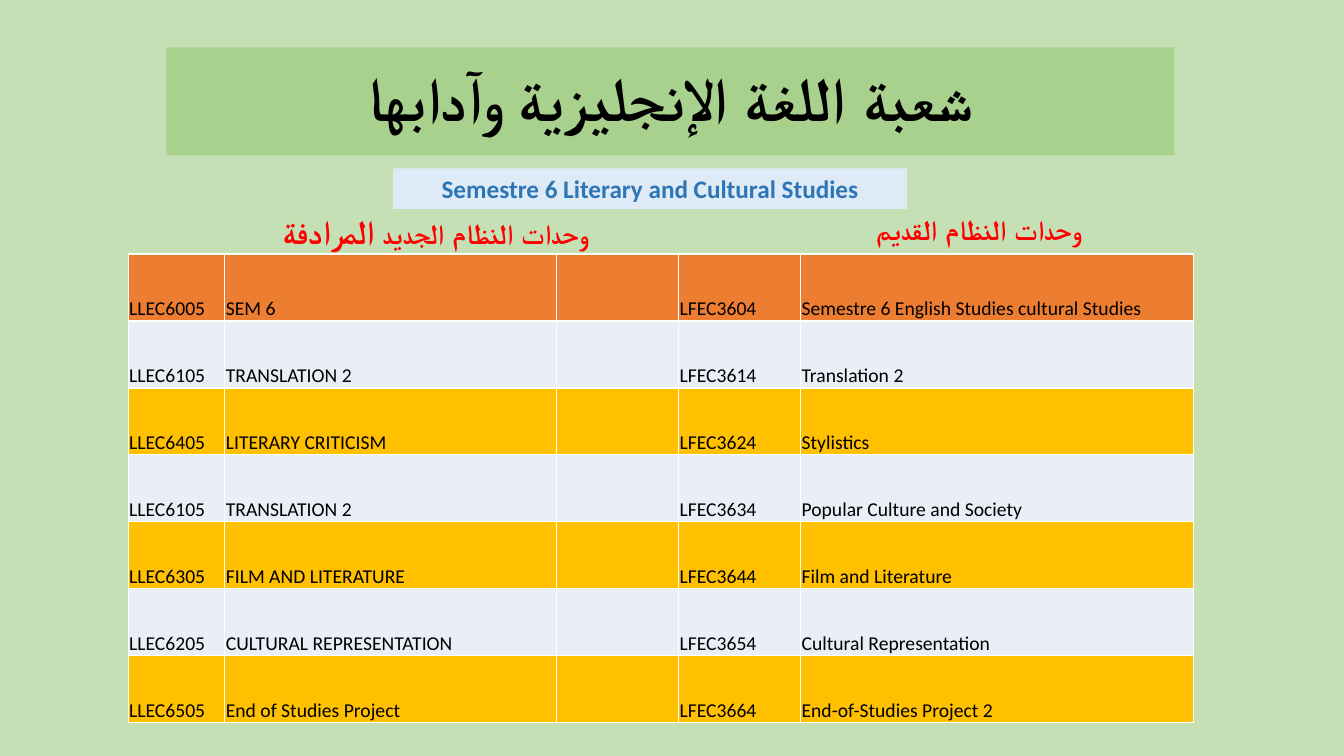
from dataclasses import dataclass
from typing import Optional

from lxml.etree import SubElement
from pptx import Presentation
from pptx.dml.color import RGBColor
from pptx.enum.shapes import MSO_SHAPE
from pptx.enum.text import MSO_ANCHOR, MSO_AUTO_SIZE, PP_ALIGN
from pptx.oxml.ns import qn
from pptx.util import Inches, Pt

FONT = "Calibri"
BLACK = RGBColor(0x00, 0x00, 0x00)
WHITE = RGBColor(0xFF, 0xFF, 0xFF)
RED = RGBColor(0xFF, 0x00, 0x00)
BLUE = RGBColor(0x2E, 0x75, 0xB6)
PALE_BLUE = RGBColor(0xDE, 0xEB, 0xF7)
PALE_GREEN = RGBColor(0xC5, 0xE0, 0xB4)
GREEN = RGBColor(0xA9, 0xD1, 0x8E)
ORANGE = RGBColor(0xED, 0x7D, 0x31)
GOLD = RGBColor(0xFF, 0xC0, 0x00)
ICE = RGBColor(0xEA, 0xEF, 0xF7)

WIDTH, HEIGHT = Inches(13.33), Inches(7.5)


def across(percent: float) -> int:
    """Share of the slide width."""
    return round(WIDTH * percent / 100)


def down(percent: float) -> int:
    """Share of the slide height."""
    return round(HEIGHT * percent / 100)


@dataclass
class Banner:
    """A line of text; its place is given in percent of the slide."""
    left: float
    top: float
    width: float
    height: float
    runs: list[tuple[str, int]]
    color: RGBColor
    fill: Optional[RGBColor] = None
    rtl: bool = True
    fits_text: bool = True
    line_spacing: Optional[float] = None


@dataclass
class Module:
    new_code: str
    new_name: str
    old_code: str
    old_name: str


BANNERS = [
    Banner(12.38, 6.27, 75, 14.27, [("شعبة اللغة الإنجليزية وآدابها", 44)],
           BLACK, GREEN, fits_text=False, line_spacing=0.9),
    Banner(15.68, 27.2, 33.45, 6.67,
           [("وحدات النظام الجديد ", 20), ("المرادفة", 24)], RED),
    Banner(56.1, 27.47, 33.45, 5.87, [("وحدات النظام القديم", 20)], RED),
    Banner(29.25, 22.27, 38.25, 5.38,
           [("Semestre 6 Literary and Cultural Studies", 18)],
           BLUE, PALE_BLUE, rtl=False),
]

MODULES = [
    Module("LLEC6005", "SEM 6", "LFEC3604",
           "Semestre 6 English Studies cultural Studies"),
    Module("LLEC6105", "TRANSLATION 2", "LFEC3614", "Translation 2"),
    Module("LLEC6405", "LITERARY CRITICISM", "LFEC3624", "Stylistics"),
    Module("LLEC6105", "TRANSLATION 2", "LFEC3634",
           "Popular Culture and Society"),
    Module("LLEC6305", "FILM AND LITERATURE", "LFEC3644",
           "Film and Literature"),
    Module("LLEC6205", "CULTURAL REPRESENTATION", "LFEC3654",
           "Cultural Representation"),
    Module("LLEC6505", "End of Studies Project", "LFEC3664",
           "End-of-Studies Project 2"),
]
COLUMNS = [7.2, 24.68, 9.08, 9.08, 29.25]
ROW = 8.86


def style_font(font, size: int, color: RGBColor, bold: bool) -> None:
    font.name, font.size, font.bold = FONT, Pt(size), bold
    font.color.rgb = color


def add_banner(slide, banner: Banner) -> None:
    box = (across(banner.left), down(banner.top),
           across(banner.width), down(banner.height))
    if banner.fill is None:
        s = slide.shapes.add_textbox(*box)
    else:
        s = slide.shapes.add_shape(MSO_SHAPE.RECTANGLE, *box)
        s.shadow.inherit = False
        s.fill.solid()
        s.fill.fore_color.rgb = banner.fill
        s.line.fill.background()
    tf = s.text_frame
    tf.word_wrap = True
    tf.vertical_anchor = MSO_ANCHOR.TOP if banner.fits_text else MSO_ANCHOR.MIDDLE
    if banner.fits_text:
        tf.auto_size = MSO_AUTO_SIZE.SHAPE_TO_FIT_TEXT
    p = tf.paragraphs[0]
    p.alignment = PP_ALIGN.CENTER
    if banner.line_spacing:
        p.line_spacing = banner.line_spacing
    if banner.rtl:
        p._p.get_or_add_pPr().set("rtl", "1")
    for text, size in banner.runs:
        r = p.add_run()
        r.text = text
        style_font(r.font, size, banner.color, True)


def add_borders(cell, color: RGBColor) -> None:
    props = cell._tc.get_or_add_tcPr()
    for side in ("a:lnL", "a:lnR", "a:lnT", "a:lnB"):
        line = SubElement(props, qn(side), w=str(Pt(1)))
        fill = SubElement(line, qn("a:solidFill"))
        SubElement(fill, qn("a:srgbClr"), val=str(color))


def fill_cell(cell, text: str, fill: RGBColor) -> None:
    add_borders(cell, WHITE)
    cell.fill.solid()
    cell.fill.fore_color.rgb = fill
    if not text:
        return
    cell.vertical_anchor = MSO_ANCHOR.BOTTOM
    cell.margin_left = cell.margin_right = cell.margin_top = Inches(0.01)
    cell.margin_bottom = 0
    cell.text_frame.text = text
    style_font(cell.text_frame.paragraphs[0].runs[0].font, 14, BLACK, False)


def add_modules(slide, modules: list[Module]) -> None:
    table = slide.shapes.add_table(
        len(modules), len(COLUMNS), across(9.53), down(33.6),
        across(sum(COLUMNS)), down(ROW * len(modules))).table
    table.first_row = table.horz_banding = False
    for column, width in zip(table.columns, COLUMNS):
        column.width = across(width)
    for i, (row, m) in enumerate(zip(table.rows, modules)):
        row.height = down(ROW)
        fill = ORANGE if i == 0 else (ICE if i % 2 else GOLD)
        texts = (m.new_code, m.new_name, "", m.old_code, m.old_name)
        for cell, text in zip(row.cells, texts):
            fill_cell(cell, text, fill)


def main() -> None:
    prs = Presentation()
    prs.slide_width, prs.slide_height = WIDTH, HEIGHT
    slide = prs.slides.add_slide(prs.slide_layouts[6])
    slide.background.fill.solid()
    slide.background.fill.fore_color.rgb = PALE_GREEN
    for banner in BANNERS:
        add_banner(slide, banner)
    add_modules(slide, MODULES)
    prs.save("out.pptx")


if __name__ == "__main__":
    main()
